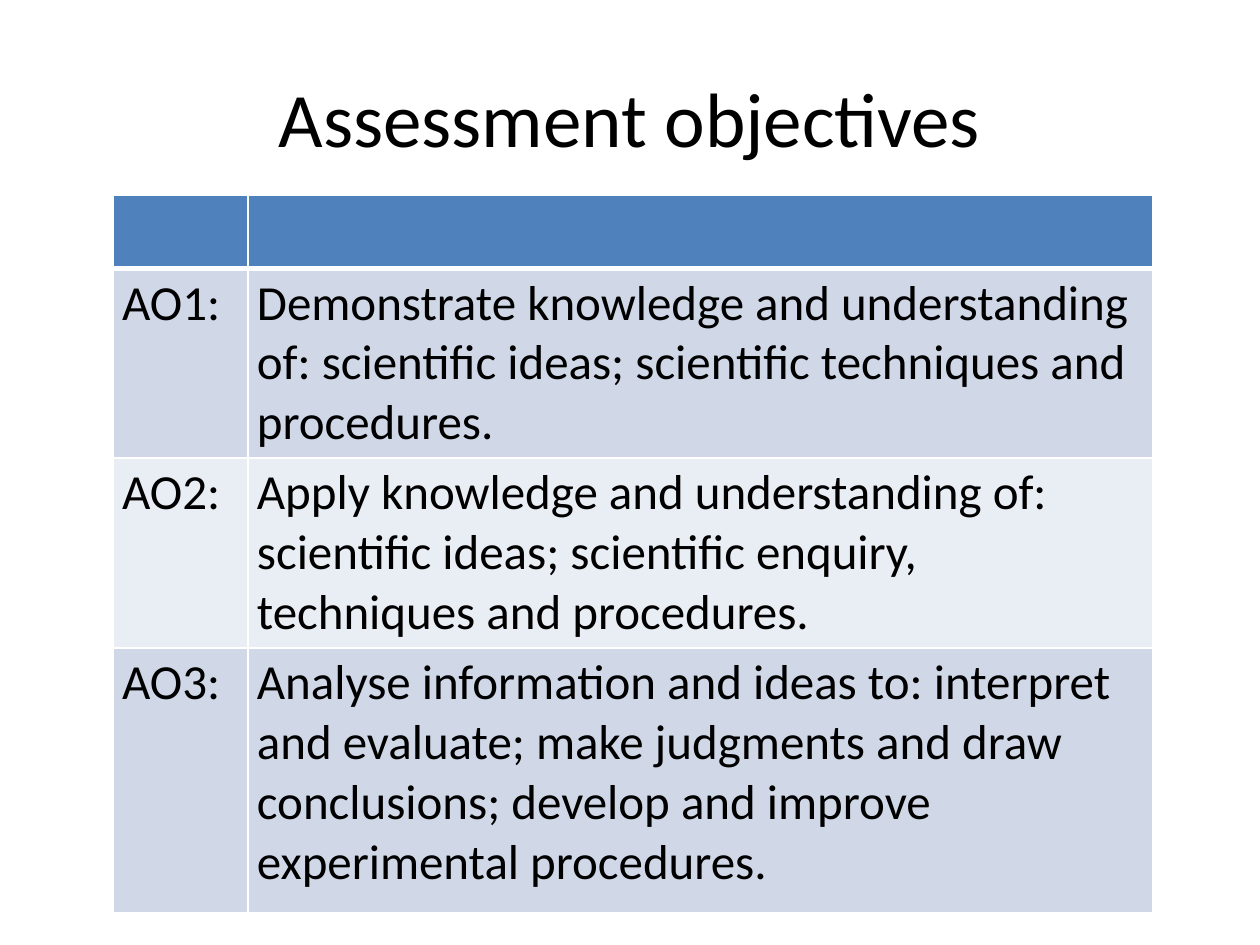
from dataclasses import dataclass

from pptx import Presentation
from pptx.dml.color import RGBColor
from pptx.enum.text import MSO_ANCHOR as Anchor, PP_ALIGN as Align
from pptx.oxml.ns import qn
from pptx.util import Inches, Pt
from lxml.etree import SubElement


@dataclass(frozen=True)
class Theme:
    font: str = "Calibri"
    title_size: int = 44
    body_size: int = 28
    text: str = "000000"
    header: str = "4F81BD"
    bands: tuple = ("D0D8E8", "E9EDF4")
    rule: str = "FFFFFF"


THEME = Theme()
OBJECTIVES = [
    ("AO1:", "Demonstrate knowledge and understanding of: scientific ideas; "
             "scientific techniques and procedures."),
    ("AO2:", "Apply knowledge and understanding of: scientific ideas; "
             "scientific enquiry, techniques and procedures."),
    ("AO3:", "Analyse information and ideas to: interpret and evaluate; make judgments "
             "and draw conclusions; develop and improve experimental procedures."),
]


def write_text(frame, text, size, align=Align.LEFT):
    para = frame.paragraphs[0]
    para.alignment = align
    span = para.add_run()
    span.text = text
    span.font.name = THEME.font
    span.font.size = Pt(size)
    span.font.bold = False
    span.font.color.rgb = RGBColor.from_string(THEME.text)


def style_cell(cell, fill, top=1, bottom=1):
    """Set margins, borders and fill; border widths are in points."""
    cell.margin_left = cell.margin_right = Inches(0.07)
    cell.margin_top = cell.margin_bottom = Inches(0.04)
    properties = cell._tc.get_or_add_tcPr()
    for side, width in (("L", 1), ("R", 1), ("T", top), ("B", bottom)):
        line = SubElement(properties, qn(f"a:ln{side}"), w=str(Pt(width)))
        solid = SubElement(line, qn("a:solidFill"))
        SubElement(solid, qn("a:srgbClr"), val=THEME.rule)
    cell.fill.solid()
    cell.fill.fore_color.rgb = RGBColor.from_string(fill)


def place_title(page, text, left, top, width, height):
    title = page.shapes.title
    title.left, title.top, title.width, title.height = left, top, width, height
    title.text_frame.vertical_anchor = Anchor.MIDDLE
    write_text(title.text_frame, text, THEME.title_size, align=Align.CENTER)


def place_objectives(page, left, top, width, height):
    table = page.shapes.add_table(len(OBJECTIVES) + 1, 2, left, top, width, height).table
    label_width = Inches(1.07)
    table.columns[0].width = label_width
    table.columns[1].width = width - label_width

    # The last row takes what the others leave
    upper = [Inches(0.58), Inches(1.5), Inches(1.5)]
    for row, row_height in zip(table.rows, upper + [height - sum(upper)]):
        row.height = row_height

    # Empty header row
    for cell in table.rows[0].cells:
        style_cell(cell, THEME.header, bottom=3)

    # One banded row for each objective
    for index, objective in enumerate(OBJECTIVES):
        for cell, text in zip(table.rows[index + 1].cells, objective):
            style_cell(cell, THEME.bands[index % 2], top=3 if index == 0 else 1)
            write_text(cell.text_frame, text, THEME.body_size)


def main():
    deck = Presentation()
    deck.slide_width, deck.slide_height = Inches(10), Inches(7.5)
    page = deck.slides.add_slide(deck.slide_layouts[5])
    place_title(page, "Assessment objectives",
                Inches(0.5), Inches(0.3), Inches(9), Inches(1.25))
    place_objectives(page, Inches(0.9), Inches(1.55), Inches(8.25), Inches(5.68))
    deck.save("out.pptx")


if __name__ == "__main__":
    main()
